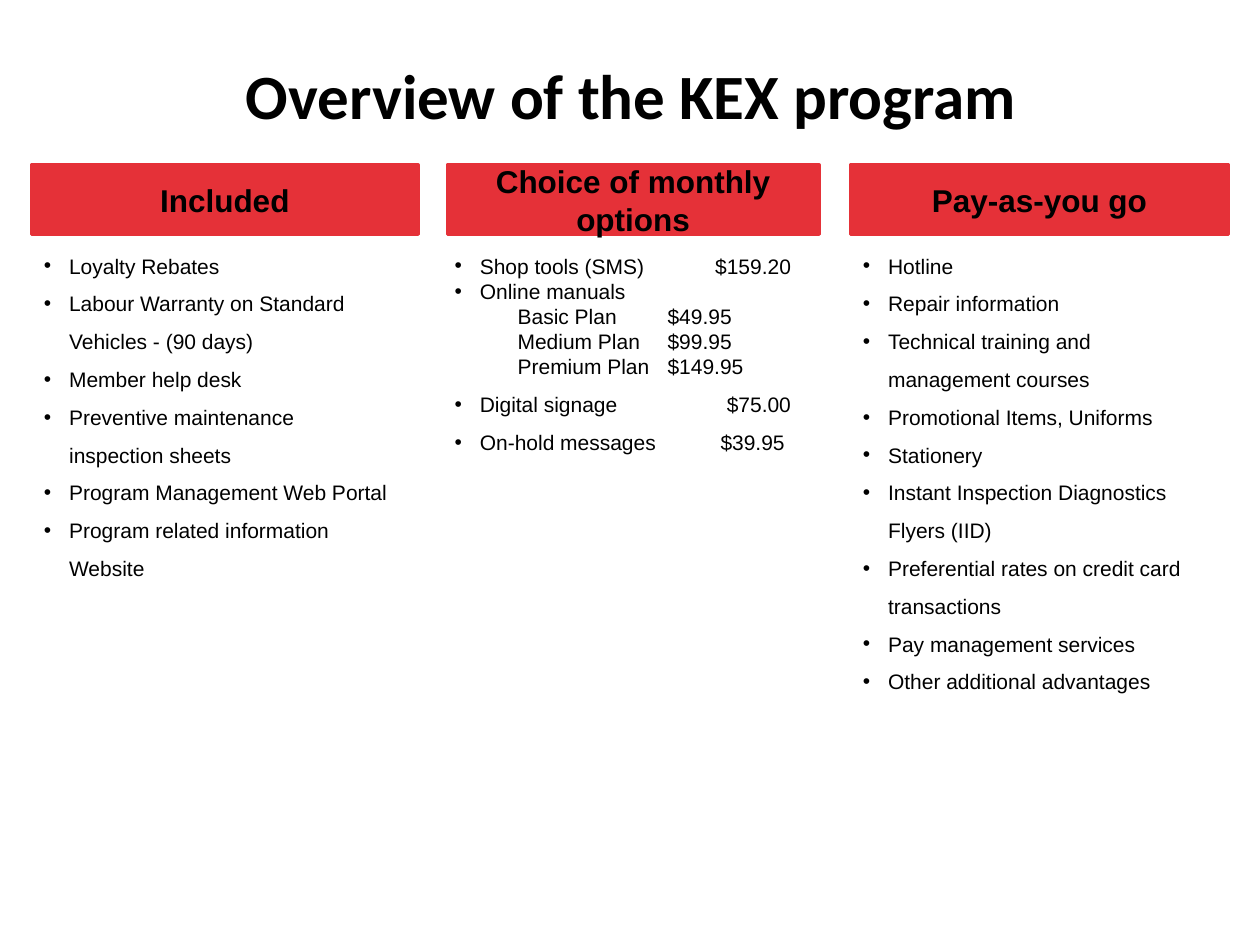
import pptx
import pptx.util
import pptx.dml.color
import pptx.enum.shapes
import pptx.enum.text
import pptx.oxml.ns
import lxml.etree

Inches = pptx.util.Inches
Pt = pptx.util.Pt
enum = pptx.enum.text


def tint(code):
    return pptx.dml.color.RGBColor.from_string(code)


def write(para, text, form, look):
    for key, val in form.items():
        setattr(para, key, val)
    run = para.add_run()
    run.text = text
    for key, val in look.items():
        setattr(run.font, key, val)
    run.font.color.rgb = tint("000000")


deck = pptx.Presentation()
deck.slide_width = Inches(10)
deck.slide_height = Inches(7.5)
slide = deck.slides.add_slide(deck.slide_layouts[6])

title = {"name": "Calibri", "size": Pt(36), "bold": True}
head = {"name": "Arial", "size": Pt(18), "bold": True}
body = {"name": "Arial", "size": Pt(12)}
mid = {"alignment": enum.PP_ALIGN.CENTER}
loose = {"line_spacing": 1.5}
tight = {"line_spacing": 1.0}
center = {"word_wrap": True, "vertical_anchor": enum.MSO_ANCHOR.MIDDLE}
grow = {"word_wrap": True, "auto_size": enum.MSO_AUTO_SIZE.SHAPE_TO_FIT_TEXT}

item = (0.2, -0.2, "•", loose, None)
price = (0.2, -0.2, "•", loose, (2.67, "r"))
hold = (0.2, -0.2, "•", loose, (2.62, "r"))
group = (0.2, -0.2, "•", tight, None)
plan = (0.69, -0.19, None, tight, (1.69, "l"))

cols = [
    ("Included", (0.25, 3.07), (0.25, 2.95, 2.83), [
        ("Loyalty Rebates", item),
        ("Labour Warranty on Standard Vehicles - (90 days)", item),
        ("Member help desk", item),
        ("Preventive maintenance inspection sheets", item),
        ("Program Management Web Portal", item),
        ("Program related information Website", item),
    ]),
    ("Choice of monthly options", (3.55, 2.95), (3.51, 3.08, 1.82), [
        ("Shop tools (SMS)\t$159.20", price),
        ("Online manuals", group),
        ("Basic Plan\t$49.95", plan),
        ("Medium Plan\t$99.95", plan),
        ("Premium Plan\t$149.95", plan),
        ("Digital signage\t$75.00", price),
        ("On-hold messages\t$39.95", hold),
    ]),
    ("Pay-as-you go", (6.75, 3), (6.75, 2.99, 3.74), [
        ("Hotline", item),
        ("Repair information", item),
        ("Technical training and management courses", item),
        ("Promotional Items, Uniforms", item),
        ("Stationery", item),
        ("Instant Inspection Diagnostics Flyers (IID)", item),
        ("Preferential rates on credit card transactions", item),
        ("Pay management services", item),
        ("Other additional advantages", item),
    ]),
]

for name, (left, width), (x, wide, high), rows in cols:
    box = slide.shapes.add_textbox(Inches(x), Inches(1.86), Inches(wide), Inches(high))
    frame = box.text_frame
    for key, val in grow.items():
        setattr(frame, key, val)
    for num, (text, (pad, hang, mark, form, stop)) in enumerate(rows):
        para = frame.add_paragraph() if num else frame.paragraphs[0]
        props = para._p.get_or_add_pPr()
        props.set("marL", str(Inches(pad)))
        props.set("indent", str(Inches(hang)))
        if mark:
            font = lxml.etree.SubElement(props, pptx.oxml.ns.qn("a:buFont"))
            font.set("typeface", "Arial")
            dot = lxml.etree.SubElement(props, pptx.oxml.ns.qn("a:buChar"))
            dot.set("char", mark)
        else:
            props.set("lvl", "1")
            lxml.etree.SubElement(props, pptx.oxml.ns.qn("a:buNone"))
        if stop:
            tabs = lxml.etree.SubElement(props, pptx.oxml.ns.qn("a:tabLst"))
            tab = lxml.etree.SubElement(tabs, pptx.oxml.ns.qn("a:tab"))
            tab.set("pos", str(Inches(stop[0])))
            tab.set("algn", stop[1])
        write(para, text, form, body)

    bar = slide.shapes.add_shape(
        pptx.enum.shapes.MSO_SHAPE.RECTANGLE,
        Inches(left), Inches(1.31), Inches(width), Inches(0.55))
    bar.shadow.inherit = False
    bar.fill.solid()
    bar.fill.fore_color.rgb = tint("E53138")
    bar.line.color.rgb = tint("E53138")
    bar.line.width = Pt(2)
    for key, val in center.items():
        setattr(bar.text_frame, key, val)
    write(bar.text_frame.paragraphs[0], name, mid, head)

top = slide.shapes.add_textbox(Inches(0.75), Inches(0.25), Inches(8.52), Inches(1))
for key, val in center.items():
    setattr(top.text_frame, key, val)
write(top.text_frame.paragraphs[0], "Overview of the KEX program", mid, title)

deck.save("out.pptx")
